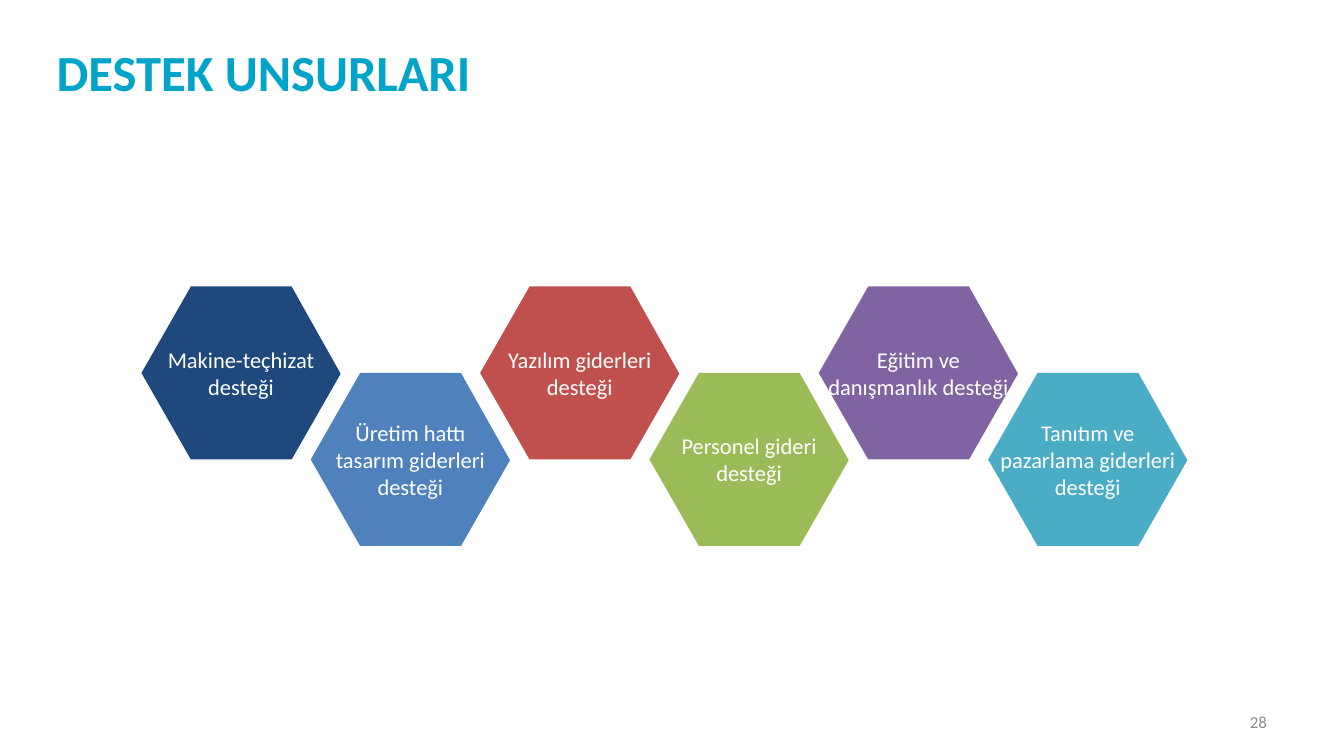
import pptx
import pptx.util
import pptx.dml.color
import pptx.enum.text

Cm = pptx.util.Cm
Align = pptx.enum.text.PP_ALIGN
Anchor = pptx.enum.text.MSO_ANCHOR

COLORS = {
    "title": "00A3CA",
    "number": "8C8C8C",
    "white": "FFFFFF",
    "navy": "1F497D",
    "blue": "4F81BD",
    "red": "C0504D",
    "green": "9BBB59",
    "purple": "8064A2",
    "teal": "4BACC6",
}

SUPPORTS = [
    ("Makine-teçhizat desteği", "navy"),
    ("Üretim hattı tasarım giderleri desteği", "blue"),
    ("Yazılım giderleri desteği", "red"),
    ("Personel gideri desteği", "green"),
    ("Eğitim ve danışmanlık desteği", "purple"),
    ("Tanıtım ve pazarlama giderleri desteği", "teal"),
]

HEXAGON = [(1.24, 0), (3.77, 0), (5, 2.19), (3.77, 4.34), (1.24, 4.34), (0, 2.17)]


class Deck:
    font = "Calibri"

    def __init__(self, width, height):
        self.show = pptx.Presentation()
        self.show.slide_width = Cm(width)
        self.show.slide_height = Cm(height)
        self.slide = self.show.slides.add_slide(self.show.slide_layouts[5])

    def color(self, name):
        return pptx.dml.color.RGBColor.from_string(COLORS[name])

    def label(self, shape, text, size, color, align, inset, bold=False):
        frame = shape.text_frame
        frame.word_wrap = True
        frame.auto_size = pptx.enum.text.MSO_AUTO_SIZE.NONE
        frame.vertical_anchor = Anchor.MIDDLE
        frame.margin_left = frame.margin_right = Cm(inset)
        frame.margin_top = frame.margin_bottom = Cm(0.13)
        line = frame.paragraphs[0]
        line.alignment = align
        run = line.add_run()
        run.text = text
        run.font.name = self.font
        run.font.size = pptx.util.Pt(size)
        run.font.bold = bold
        run.font.color.rgb = self.color(color)
        return line

    def title(self, text, left, top, width, height):
        shape = self.slide.shapes.title
        shape.left, shape.top = Cm(left), Cm(top)
        shape.width, shape.height = Cm(width), Cm(height)
        line = self.label(shape, text, 36, "title", Align.LEFT, 0.25, True)
        line.line_spacing = 0.9

    def hexagon(self, text, color, left, top):
        points = [(Cm(left + x), Cm(top + y)) for x, y in HEXAGON]
        pen = self.slide.shapes.build_freeform(*points[0])
        pen.add_line_segments(points[1:], close=True)
        shape = pen.convert_to_shape()
        shape.shadow.inherit = False
        shape.fill.solid()
        shape.fill.fore_color.rgb = self.color(color)
        shape.line.fill.background()
        self.label(shape, text, 16, "white", Align.CENTER, 0.2)

    def number(self, text, left, top, width, height):
        box = self.slide.shapes.add_textbox(Cm(left), Cm(top), Cm(width), Cm(height))
        self.label(box, text, 12, "number", Align.RIGHT, 0.25)

    def save(self):
        self.show.save("out.pptx")


def main():
    deck = Deck(33.73, 18.97)
    deck.title("DESTEK UNSURLARI", 1.17, 0.05, 29.11, 3.66)
    for index, (text, color) in enumerate(SUPPORTS):
        deck.hexagon(text, color, 3.55 + 4.25 * index, 7.19 + 2.17 * (index % 2))
    deck.number("28", 24.18, 17.6, 7.87, 1.02)
    deck.save()


if __name__ == "__main__":
    main()
